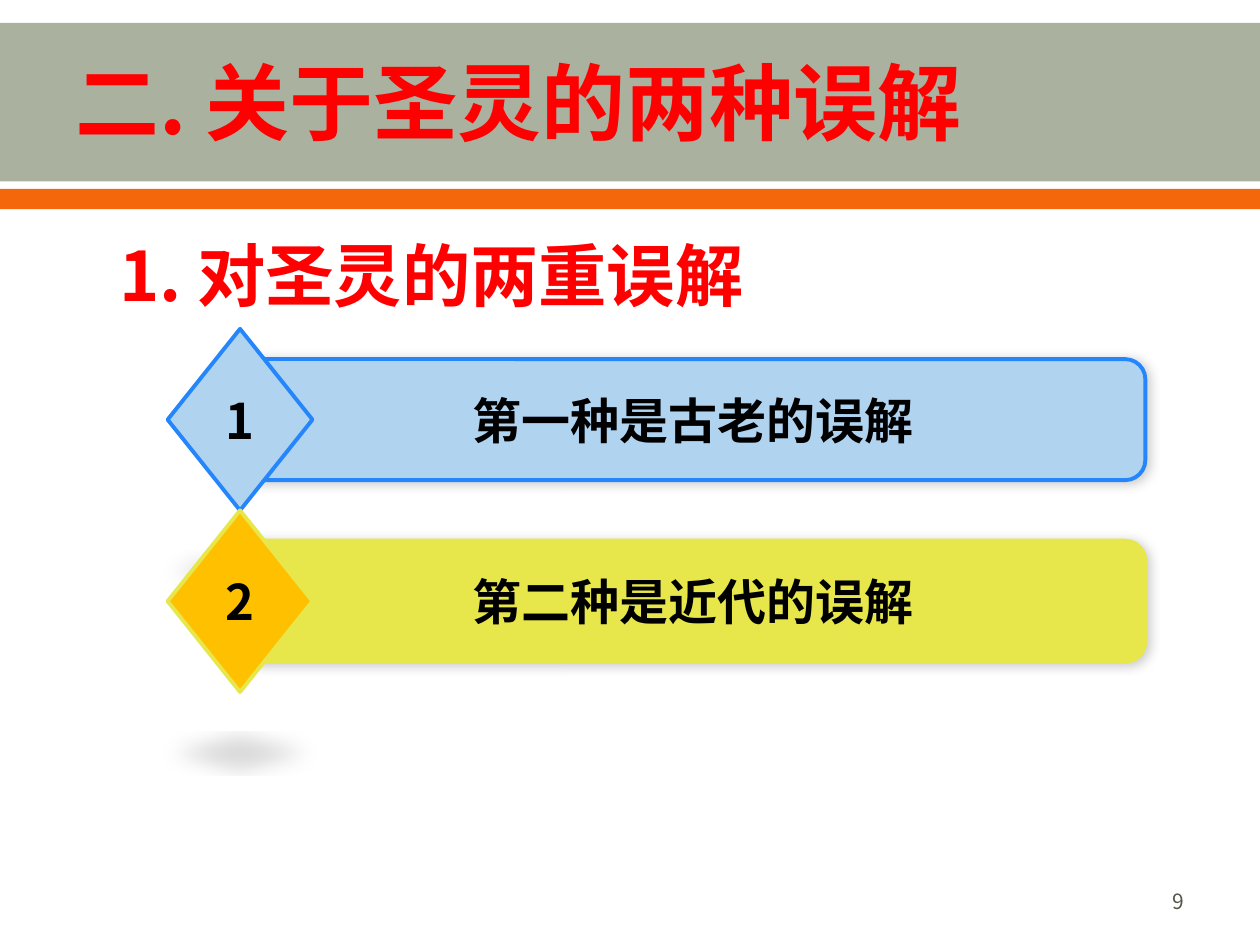
from dataclasses import dataclass
from lxml.etree import SubElement
from pptx import Presentation
from pptx.dml.color import RGBColor
from pptx.enum.shapes import MSO_SHAPE
from pptx.enum.text import MSO_ANCHOR, PP_ALIGN
from pptx.oxml.ns import qn
from pptx.util import Cm, Pt

FONT = "Noto Sans CJK SC"
RED, BLACK, GREY = "FF0000", "000000", "55554A"


@dataclass
class Item:
    num: str
    text: str
    bar: str
    gem: str
    line: str


ITEMS = [
    Item("1", "第一种是古老的误解", "B0D3F0", "B0D3F0", "2586FB"),
    Item("2", "第二种是近代的误解", "E7E74B", "FFC000", "E7E74B"),
]
TOP, STEP = 6.63, 3.66  # first diamond, distance to the next

# Shadow values in EMU, 1/60000 degree and 1/1000 percent
SOFT = dict(alpha=20000, blurRad=76200, dist=12700, dir=2700000)
CAST = dict(alpha=15000, blurRad=152400, dist=317500, dir=5400000,
            sx=90000, sy=-19000)


def color(code: str) -> RGBColor:
    return RGBColor.from_string(code)


def write(shape, text: str, size: float, ink: str, align=PP_ALIGN.LEFT,
          anchor=MSO_ANCHOR.MIDDLE, bold: bool = True):
    frame = shape.text_frame
    style = dict(word_wrap=True, vertical_anchor=anchor,
                 margin_left=Cm(0.25), margin_right=Cm(0.25),
                 margin_top=Cm(0.13), margin_bottom=Cm(0.13))
    for key, val in style.items():
        setattr(frame, key, val)
    para = frame.paragraphs[0]
    para.alignment = align
    run = para.add_run()
    run.text = text
    for key, val in dict(name=FONT, size=Pt(size), bold=bold).items():
        setattr(run.font, key, val)
    run.font.color.rgb = color(ink)
    # East Asian letters need their own typeface
    SubElement(run.font._element, qn("a:ea"), typeface=FONT)
    return para


def label(slide, box: tuple, *args, **more):
    shape = slide.shapes.add_textbox(*map(Cm, box))
    return shape, write(shape, *args, **more)


def draw(slide, kind, box: tuple, fill: str, line: str = ""):
    shape = slide.shapes.add_shape(kind, *map(Cm, box))
    shape.shadow.inherit = False
    shape.fill.solid()
    shape.fill.fore_color.rgb = color(fill)
    if line:
        shape.line.color.rgb = color(line)
        shape.line.width = Pt(2.22)
    else:
        shape.line.fill.background()
    return shape


def shade(shape, alpha: int, **form: int) -> None:
    effects = shape._element.spPr.find(qn("a:effectLst"))
    outer = SubElement(effects, qn("a:outerShdw"), rotWithShape="0",
                       **{key: str(val) for key, val in form.items()})
    tint = SubElement(outer, qn("a:srgbClr"), val=BLACK)
    SubElement(tint, qn("a:alpha"), val=str(alpha))


def add_item(slide, item: Item, top: float) -> None:
    bar = draw(slide, MSO_SHAPE.ROUNDED_RECTANGLE,
               (4.85, top + 0.61, 18.24, 2.44), item.bar, item.line)
    gem = draw(slide, MSO_SHAPE.DIAMOND,
               (3.38, top, 2.92, STEP), item.gem, item.line)
    for shape, text, cast in ((bar, item.text, SOFT), (gem, item.num, CAST)):
        shade(shape, **cast)
        write(shape, text, 28, BLACK, PP_ALIGN.CENTER)


def main() -> None:
    deck = Presentation()
    deck.slide_width, deck.slide_height = Cm(25.4), Cm(19.05)
    slide = deck.slides.add_slide(deck.slide_layouts[6])

    # Header bands
    draw(slide, MSO_SHAPE.RECTANGLE, (0, 0.46, 25.4, 3.2), "ABB19F")
    draw(slide, MSO_SHAPE.RECTANGLE, (0, 3.81, 25.4, 0.41), "F4680B")

    # Page number
    label(slide, (18.21, 17.65, 5.92, 1.02), "9", 12, GREY,
          PP_ALIGN.RIGHT, bold=False)

    # Numbered bars
    for i, item in enumerate(ITEMS):
        add_item(slide, item, TOP + i * STEP)

    # Title and heading
    label(slide, (1.27, 0.51, 20.37, 3.07), "二. 关于圣灵的两种误解", 48, RED)
    head, para = label(slide, (2.16, 4.45, 14.05, 2.18),
                       "1. 对圣灵的两重误解", 39, RED, anchor=MSO_ANCHOR.TOP)
    head.text_frame.margin_top = head.text_frame.margin_bottom = Cm(0.25)
    props = para._p.get_or_add_pPr()
    props.set("marL", str(Cm(0.97)))
    props.set("indent", str(-Cm(0.97)))

    deck.save("out.pptx")


if __name__ == "__main__":
    main()
